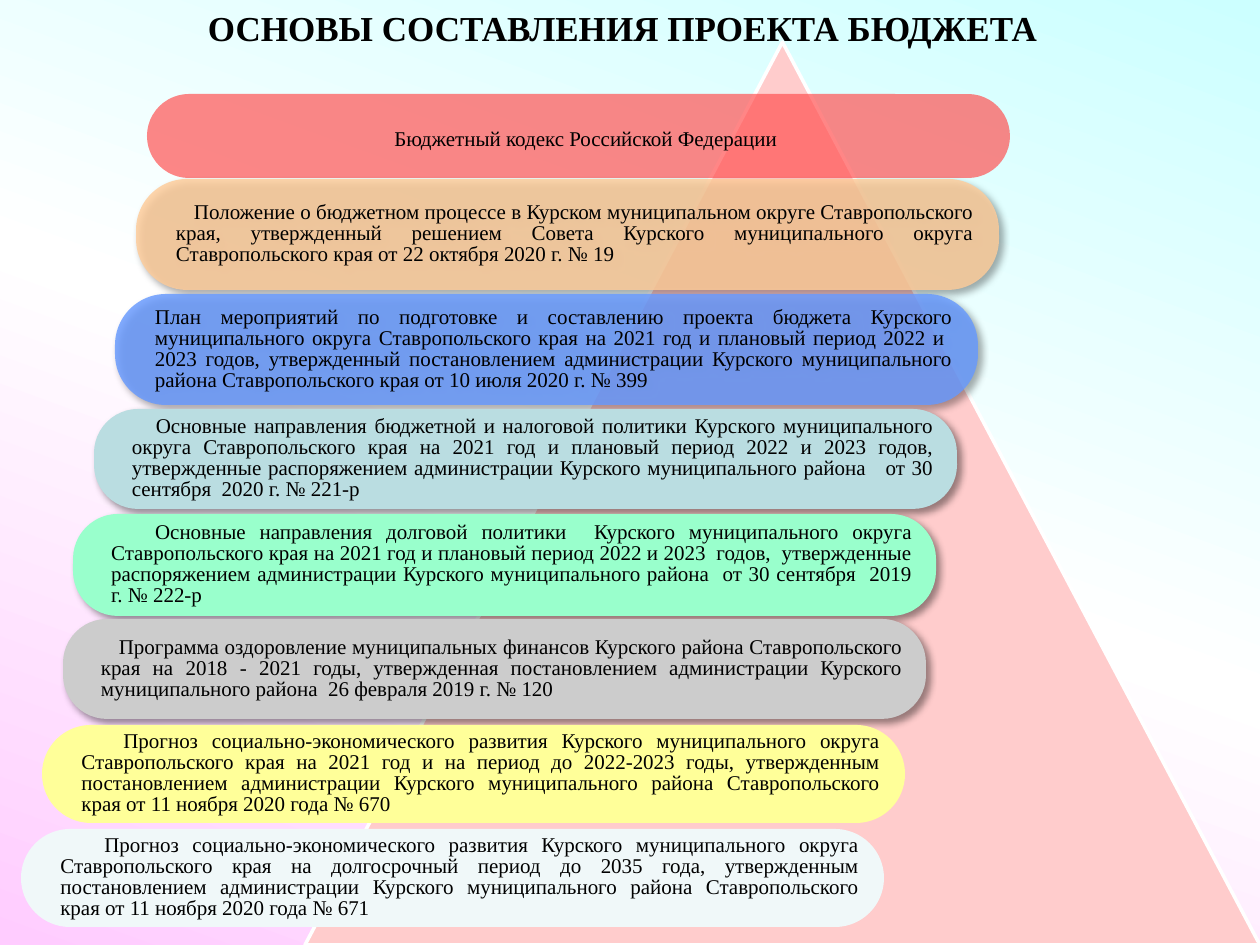
from dataclasses import dataclass

from lxml.etree import SubElement
from pptx import Presentation
from pptx.dml.color import RGBColor
from pptx.enum.shapes import MSO_SHAPE
from pptx.enum.text import MSO_ANCHOR, MSO_AUTO_SIZE, PP_ALIGN
from pptx.oxml import parse_xml
from pptx.oxml.ns import nsdecls, qn
from pptx.shapes.autoshape import Shape
from pptx.slide import Slide
from pptx.util import Emu, Pt

SCALE = 914400 / 126
FONT = "Times New Roman"
WIDTH = 863


@dataclass
class Band:
    left: int
    top: int
    height: int
    color: str
    text: str
    alpha: int = 100
    round: float = 0.5
    indent: int = 0
    shade: bool = False
    align: PP_ALIGN = PP_ALIGN.JUSTIFY
    lead: int = 12


BANDS = [
    Band(147, 94, 84, "FF5050", "Бюджетный кодекс Российской Федерации",
         alpha=69, align=PP_ALIGN.CENTER, lead=17),
    Band(136, 179, 111, "FFCC99",
         "Положение о бюджетном процессе в Курском муниципальном округе "
         "Ставропольского края, утвержденный решением Совета Курского "
         "муниципального округа Ставропольского края от 22 октября 2020 г. № 19",
         alpha=82, round=0.46, indent=18, shade=True),
    Band(115, 294, 111, "6699FF",
         "План мероприятий по подготовке и составлению проекта бюджета Курского "
         "муниципального округа Ставропольского края на 2021 год и плановый "
         "период 2022 и  2023 годов, утвержденный постановлением администрации "
         "Курского муниципального района Ставропольского края от 10 июля 2020 г. "
         "№ 399", alpha=82, round=0.46, shade=True),
    Band(94, 409, 100, "BADDE1",
         "Основные направления бюджетной и налоговой политики Курского "
         "муниципального округа Ставропольского края на 2021 год и плановый "
         "период 2022 и 2023 годов, утвержденные распоряжением администрации "
         "Курского муниципального района   от 30 сентября  2020 г. № 221-р",
         round=0.44, indent=24, shade=True),
    Band(73, 514, 102, "99FFCC",
         "Основные направления долговой политики  Курского муниципального округа "
         "Ставропольского края на 2021 год и плановый период 2022 и 2023  годов,  "
         "утвержденные распоряжением администрации Курского муниципального "
         "района  от 30 сентября  2019 г. № 222-р",
         round=0.44, indent=44, shade=True),
    Band(63, 619, 100, "CCCCCC",
         "Программа оздоровление муниципальных финансов Курского района "
         "Ставропольского края на 2018 - 2021 годы, утвержденная постановлением "
         "администрации Курского муниципального района  26 февраля 2019 г. № 120",
         round=0.44, indent=18, shade=True),
    Band(42, 725, 98, "FFFF99",
         "Прогноз социально-экономического развития Курского муниципального "
         "округа Ставропольского края на 2021 год и на период до 2022-2023 годы, "
         "утвержденным постановлением администрации Курского муниципального "
         "района Ставропольского края от 11 ноября 2020 года № 670", indent=42),
    Band(21, 829, 98, "F0F8F9",
         "Прогноз социально-экономического развития Курского муниципального "
         "округа Ставропольского края на долгосрочный период до 2035 года, "
         "утвержденным постановлением администрации Курского муниципального "
         "района Ставропольского края от 11 ноября 2020 года № 671", indent=44),
]


def px(n: int) -> Emu:
    return Emu(round(n * SCALE))


def rgb(code: str) -> RGBColor:
    return RGBColor.from_string(code)


def paint(slide: Slide) -> None:
    """Three-stop gradient behind the slide."""
    stops = "".join(
        f'<a:gs pos="{pos * 1000}"><a:srgbClr val="{code}"/></a:gs>'
        for pos, code in [(0, "CCFFFF"), (50, "FFFFFF"), (100, "FFCCFF")])
    slide.element.cSld.insert(0, parse_xml(
        f'<p:bg {nsdecls("p", "a")}><p:bgPr><a:gradFill rotWithShape="1">'
        f'<a:gsLst>{stops}</a:gsLst><a:lin ang="{110 * 60000}" scaled="0"/>'
        '</a:gradFill><a:effectLst/></p:bgPr></p:bg>'))


def fade(shape: Shape, alpha: int) -> None:
    color = shape.element.spPr.find(qn("a:solidFill"))[0]
    SubElement(color, qn("a:alpha"), val=str(alpha * 1000))


def cast(shape: Shape) -> None:
    """Soft shadow to the lower right."""
    effects = shape.element.spPr.find(qn("a:effectLst"))
    effects.append(parse_xml(
        f'<a:outerShdw {nsdecls("a")} blurRad="{Pt(4)}" dist="{Pt(3)}" '
        f'dir="{45 * 60000}" algn="tl" rotWithShape="0"><a:srgbClr val="000000">'
        '<a:alpha val="40000"/></a:srgbClr></a:outerShdw>'))


def write(shape: Shape, text: str, size: int, align: PP_ALIGN, bold: bool = False):
    para = shape.text_frame.paragraphs[0]
    para.alignment = align
    run = para.add_run()
    run.text = text
    font = run.font
    font.name, font.size, font.bold = FONT, Pt(size), bold
    font.color.rgb = rgb("000000")
    return para


def draw(slide: Slide, band: Band) -> None:
    shape = slide.shapes.add_shape(
        MSO_SHAPE.ROUNDED_RECTANGLE,
        px(band.left), px(band.top), px(WIDTH), px(band.height))
    shape.adjustments[0] = band.round
    shape.shadow.inherit = False
    shape.fill.solid()
    shape.fill.fore_color.rgb = rgb(band.color)
    shape.line.fill.background()
    if band.alpha < 100:
        fade(shape, band.alpha)
    if band.shade:
        cast(shape)
    frame = shape.text_frame
    frame.word_wrap = True
    frame.vertical_anchor = MSO_ANCHOR.MIDDLE
    frame.margin_left, frame.margin_right = px(25), px(10)
    frame.margin_top = frame.margin_bottom = px(6)
    para = write(shape, band.text, 12, band.align)
    para.line_spacing = Pt(band.lead)
    if band.indent:
        para._p.get_or_add_pPr().set("indent", str(px(band.indent)))


def peak(slide: Slide) -> None:
    shape = slide.shapes.add_shape(
        MSO_SHAPE.ISOSCELES_TRIANGLE, px(305), px(42), px(955), px(903))
    shape.adjustments[0] = 0.5
    shape.shadow.inherit = False
    shape.fill.solid()
    shape.fill.fore_color.rgb = rgb("FFCCCC")
    shape.line.color.rgb = rgb("FFFFFF")
    shape.line.width = Pt(2)


def head(slide: Slide) -> None:
    title = slide.shapes.title
    title.left, title.top, title.width, title.height = px(136), px(0), px(973), px(55)
    frame = title.text_frame
    frame.word_wrap = True
    frame.auto_size = MSO_AUTO_SIZE.SHAPE_TO_FIT_TEXT
    frame.vertical_anchor = MSO_ANCHOR.TOP
    write(title, "ОСНОВЫ СОСТАВЛЕНИЯ ПРОЕКТА БЮДЖЕТА", 20, PP_ALIGN.CENTER, True)
    # Keep the title in front of the triangle
    slide.shapes.element.append(title.element)


def main() -> None:
    deck = Presentation()
    deck.slide_width, deck.slide_height = px(1260), px(945)
    slide = deck.slides.add_slide(deck.slide_layouts[5])
    paint(slide)
    peak(slide)
    for band in BANDS:
        draw(slide, band)
    head(slide)
    deck.save("out.pptx")


if __name__ == "__main__":
    main()
